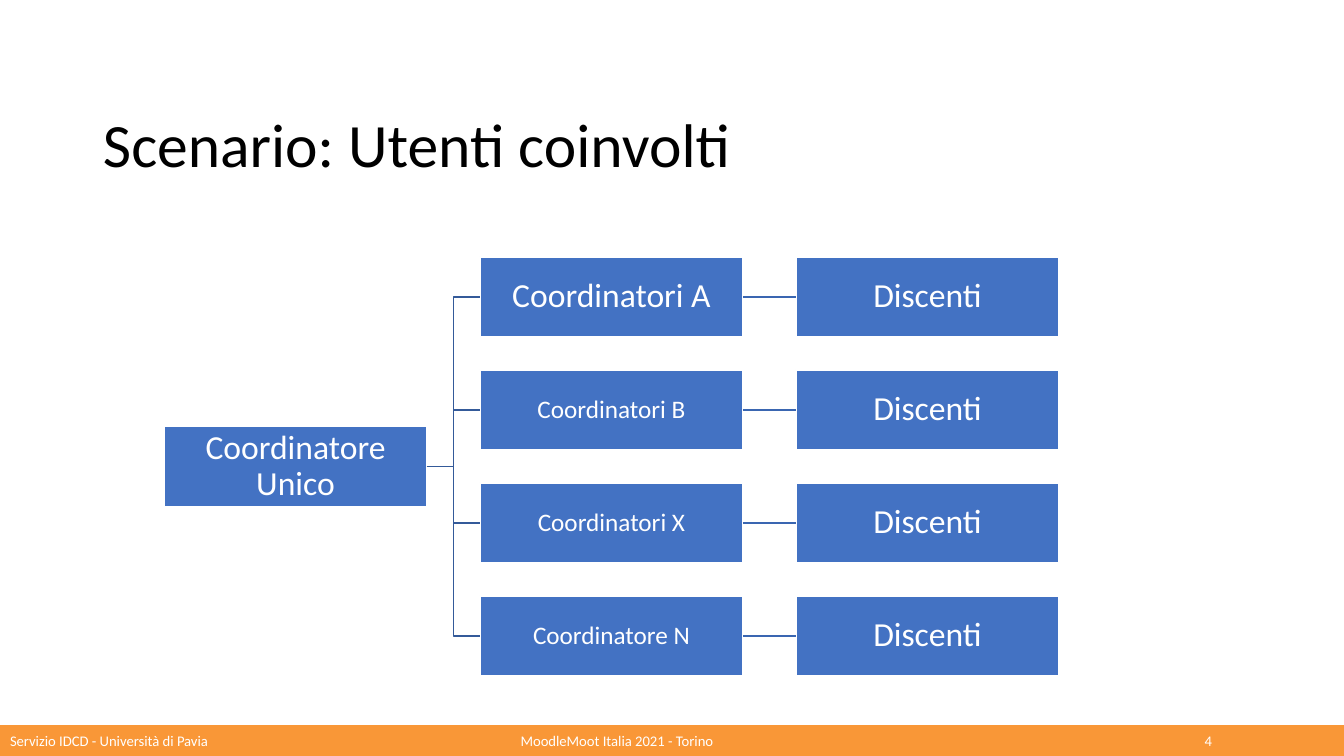
"""Build the slide showing the users involved in the scenario as a horizontal tree."""
from lxml.etree import SubElement
from pptx import Presentation
from pptx.dml.color import RGBColor
from pptx.enum.shapes import MSO_CONNECTOR, MSO_SHAPE
from pptx.enum.text import MSO_ANCHOR, PP_ALIGN
from pptx.oxml.ns import qn
from pptx.util import Emu, Pt

PX = 914400 / 100.8
BOX_WIDTH, BOX_HEIGHT = 263, 80
LEFT, TOP = 164, 257
COLUMN_STEP, ROW_STEP = 316, 113
COORDINATORS = [("Coordinatori A", 24), ("Coordinatori B", 18),
                ("Coordinatori X", 18), ("Coordinatore N", 18)]


def px(*lengths):
    return [Emu(round(length * PX)) for length in lengths]


def write(shape, text, size, color, align, margins=(10, 5), anchor=MSO_ANCHOR.MIDDLE):
    frame = shape.text_frame
    frame.word_wrap = True
    frame.vertical_anchor = anchor
    frame.margin_left = frame.margin_right = px(margins[0])[0]
    frame.margin_top = frame.margin_bottom = px(margins[1])[0]
    paragraph = frame.paragraphs[0]
    paragraph.alignment = align
    paragraph.line_spacing = 0.9
    run = paragraph.add_run()
    run.text = text
    run.font.size = Pt(size)
    run.font.name = "Calibri"
    run.font.color.rgb = RGBColor.from_string(color)


presentation = Presentation()
presentation.slide_width, presentation.slide_height = px(1344, 756)
slide = presentation.slides.add_slide(presentation.slide_layouts[5])
shapes = slide.shapes

title = shapes.title
title.left, title.top, title.width, title.height = px(93, 75, 1159, 146)
write(title, "Scenario: Utenti coinvolti", 44, "000000", PP_ALIGN.LEFT)

footer_bar = shapes.add_shape(MSO_SHAPE.RECTANGLE, *px(0, 725, 1344, 31))
footer_bar.shadow.inherit = False
footer_bar.fill.solid()
footer_bar.fill.fore_color.rgb = RGBColor.from_string("F99737")
footer_bar.line.fill.background()

for text, left, width, align in [
    ("Servizio IDCD - Università di Pavia", 0, 411, PP_ALIGN.LEFT),
    ("MoodleMoot Italia 2021 - Torino", 467, 300, PP_ALIGN.CENTER),
    ("4", 1142, 80, PP_ALIGN.RIGHT),
]:
    footer_text = shapes.add_textbox(*px(left, 729, width, 29))
    write(footer_text, text, 10.5, "FFFFFF", align, anchor=MSO_ANCHOR.TOP)

nodes = [("Coordinatore Unico", 24, 0, 1.5)]
for row, (name, size) in enumerate(COORDINATORS):
    nodes += [(name, size, 1, row), ("Discenti", 24, 2, row)]

boxes = []
for text, size, column, row in nodes:
    box = shapes.add_shape(MSO_SHAPE.RECTANGLE, *px(
        LEFT + column * COLUMN_STEP, TOP + row * ROW_STEP, BOX_WIDTH, BOX_HEIGHT))
    box.shadow.inherit = False
    box.fill.solid()
    box.fill.fore_color.rgb = RGBColor.from_string("4372C3")
    box.line.color.rgb = RGBColor.from_string("FFFFFF")
    box.line.width = Pt(1)
    write(box, text, size, "FFFFFF", PP_ALIGN.CENTER, margins=(2, 2))
    boxes.append(box)

root, coordinators, learners = boxes[0], boxes[1::2], boxes[2::2]
links = [(root, box, MSO_CONNECTOR.ELBOW, "345A99") for box in coordinators]
links += [(start, end, MSO_CONNECTOR.STRAIGHT, "3A66B1")
          for start, end in zip(coordinators, learners)]
for start, end, kind, color in links:
    connector = shapes.add_connector(kind, 0, 0, 0, 0)
    connector.begin_connect(start, 3)
    connector.end_connect(end, 1)
    connector.line.color.rgb = RGBColor.from_string(color)
    connector.line.width = Pt(1)
    SubElement(connector.element.spPr, qn("a:effectLst"))

presentation.save("out.pptx")
